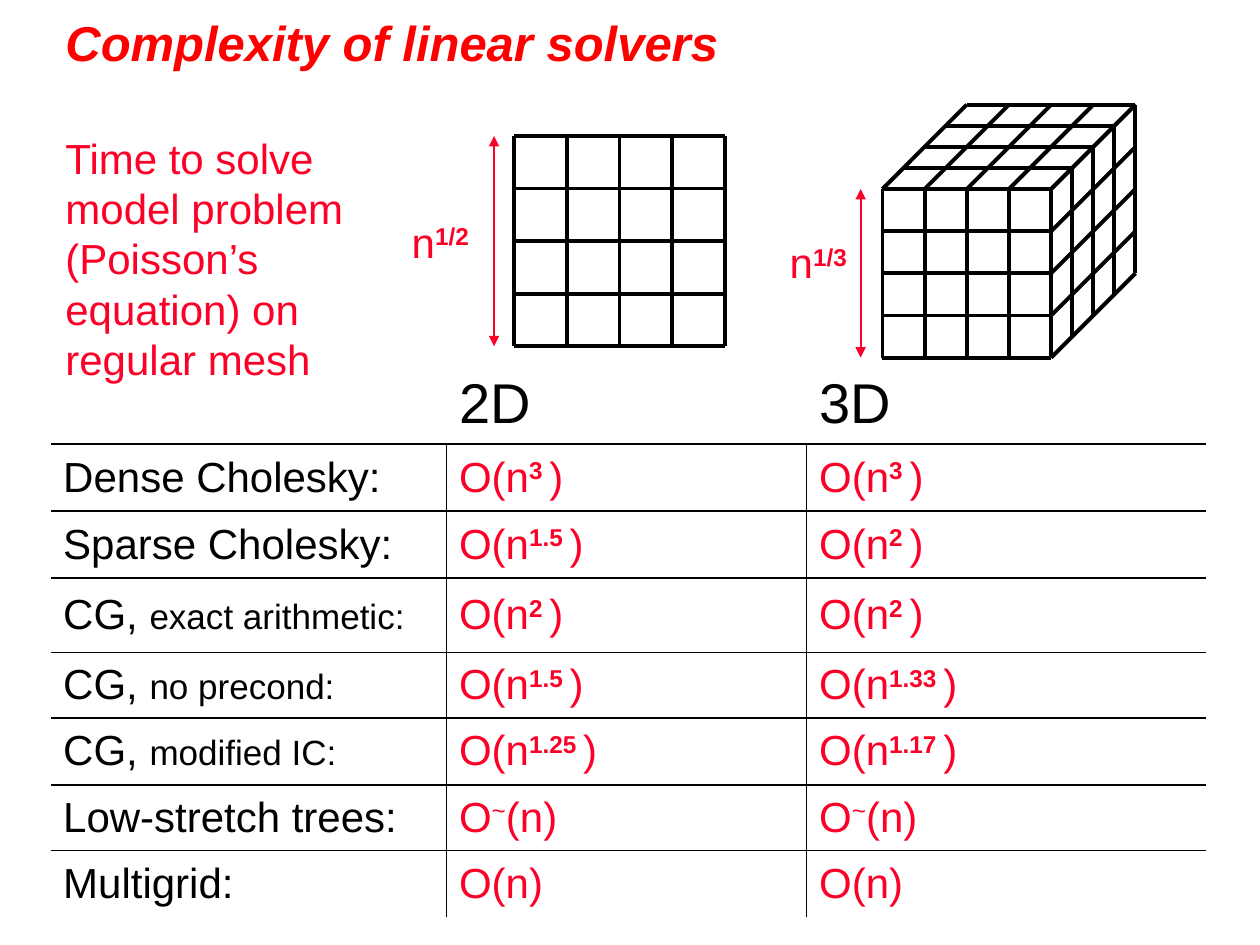
"""Builds the slide on the complexity of linear solvers in 2D and 3D."""
from lxml import etree
from pptx import Presentation
from pptx.dml.color import RGBColor
from pptx.enum.shapes import MSO_CONNECTOR
from pptx.enum.text import MSO_ANCHOR
from pptx.oxml.ns import qn
from pptx.util import Cm, Pt

STRAIGHT = MSO_CONNECTOR.STRAIGHT
MIDDLE = MSO_ANCHOR.MIDDLE
FONT = "Arial"
COLORS = {"title": "FF0000", "accent": "FC0128", "ink": "000000"}


def add_runs(paragraph, text, size, color):
    """Adds runs to a paragraph; parts between carets are raised."""
    for position, part in enumerate(text.split("^")):
        run = paragraph.add_run()
        run.text = part
        run.font.name = FONT
        run.font.size = Pt(size)
        run.font.color.rgb = RGBColor.from_string(COLORS[color])
        if position % 2:
            run.font.bold = part != "~"
            run._r.get_or_add_rPr().set("baseline", "30000")


def add_line(group, x1, y1, x2, y2, color="ink", width=2.25, arrows=False):
    """Adds a straight line, with arrowheads at both ends if asked."""
    line = group.shapes.add_connector(STRAIGHT, Cm(x1), Cm(y1), Cm(x2), Cm(y2))
    line.line.color.rgb = RGBColor.from_string(COLORS[color])
    line.line.width = Pt(width)
    if arrows:
        outline = line.line._get_or_add_ln()
        for end in ("a:headEnd", "a:tailEnd"):
            etree.SubElement(outline, qn(end), type="triangle")
    etree.SubElement(line._element.spPr, qn("a:effectLst"))


prs = Presentation()
prs.slide_width, prs.slide_height = Cm(25.4), Cm(19.05)
slide = prs.slides.add_slide(prs.slide_layouts[6])

title = slide.shapes.add_textbox(Cm(1.07), Cm(0), Cm(23.7), Cm(1.7)).text_frame
title.word_wrap = True
title.vertical_anchor = MIDDLE
add_runs(title.paragraphs[0], "Complexity of linear solvers", 28, "title")
title.paragraphs[0].runs[0].font.bold = True
title.paragraphs[0].runs[0].font.italic = True

COLUMN_WIDTHS = [7.98, 7.26, 8.05]
ROW_HEIGHTS = [1.6, 1.35, 1.35, 1.5, 1.32, 1.35, 1.32, 1.35]
COSTS = [
    ("", "", "2D", "3D"),
    ("Dense Cholesky:", "", "O(n^3 ^)", "O(n^3 ^)"),
    ("Sparse Cholesky:", "", "O(n^1.5 ^)", "O(n^2 ^)"),
    ("CG, ", "exact arithmetic:", "O(n^2 ^)", "O(n^2 ^)"),
    ("CG, ", "no precond:", "O(n^1.5 ^)", "O(n^1.33 ^)"),
    ("CG, ", "modified IC:", "O(n^1.25 ^)", "O(n^1.17 ^)"),
    ("Low-stretch trees:", "", "O^~^(n)", "O^~^(n)"),
    ("Multigrid:", "", "O(n)", "O(n)"),
]
last_row, last_column = len(COSTS) - 1, len(COLUMN_WIDTHS) - 1
costs = slide.shapes.add_table(
    len(COSTS), len(COLUMN_WIDTHS), Cm(1.02), Cm(7.34),
    Cm(sum(COLUMN_WIDTHS)), Cm(sum(ROW_HEIGHTS))).table
costs.first_row = costs.horz_banding = False
for column, width in zip(costs.columns, COLUMN_WIDTHS):
    column.width = Cm(width)

for r, (method, variant, *orders) in enumerate(COSTS):
    costs.rows[r].height = Cm(ROW_HEIGHTS[r])
    for c, text in enumerate([method, *orders]):
        cell = costs.cell(r, c)
        cell.vertical_anchor = MIDDLE
        cell.fill.background()
        paragraph = cell.text_frame.paragraphs[0]
        if text:
            color = "accent" if r and c else "ink"
            add_runs(paragraph, text, 24 if r else 32, color)
        if c == 0 and variant:
            add_runs(paragraph, variant, 20, "ink")
        borders = {
            "a:lnL": r > 0 and c > 0,
            "a:lnR": r > 0 and c < last_column,
            "a:lnT": r > 0,
            "a:lnB": r < last_row,
        }
        properties = cell._tc.get_or_add_tcPr()
        for place, (side, drawn) in enumerate(borders.items()):
            border = etree.Element(qn(side), w=str(Pt(1)))
            if drawn:
                fill = etree.SubElement(border, qn("a:solidFill"))
                etree.SubElement(fill, qn("a:srgbClr"), val=COLORS["ink"])
            else:
                etree.SubElement(border, qn("a:noFill"))
            properties.insert(place, border)

CELLS = 4
square = slide.shapes.add_group_shape()
left, top, step = 10.37, 2.74, 1.06
right, bottom = left + CELLS * step, top + CELLS * step
for i in range(CELLS + 1):
    x, y = left + i * step, top + i * step
    add_line(square, left, y, right, y)
    add_line(square, x, bottom, x, top)
add_line(square, 9.96, bottom, 9.96, top, "accent", 1, True)

cube = slide.shapes.add_group_shape()
left, top, step = 17.79, 3.81, 0.85
right, bottom = left + CELLS * step, top + CELLS * step
depth = CELLS * step / 2
for i in range(CELLS + 1):
    x, y, back = left + i * step, top + i * step, i * step / 2
    if i:
        add_line(cube, left, y, right, y)
    add_line(cube, x, bottom, x, top)
    add_line(cube, left + back, top - back, right + back, top - back)
    add_line(cube, x, top, x + depth, top - depth)
    add_line(cube, right + back, top - back, right + back, bottom - back)
    add_line(cube, right + depth, y - depth, right, y)
add_line(cube, 17.35, bottom, 17.35, top, "accent", 1, True)

for group, x, y, side in ((square, 8.05, 4.24, "n^1/2"), (cube, 15.67, 4.65, "n^1/3")):
    label = group.shapes.add_textbox(Cm(x), Cm(y), Cm(1.78), Cm(1.27)).text_frame
    label.word_wrap = False
    add_runs(label.paragraphs[0], side, 24, "accent")

problem = slide.shapes.add_textbox(Cm(1.07), Cm(2.54), Cm(6.15), Cm(5.33)).text_frame
problem.word_wrap = True
add_runs(
    problem.paragraphs[0],
    "Time to solve model problem (Poisson’s equation) on regular mesh",
    24, "accent")

prs.save("out.pptx")
